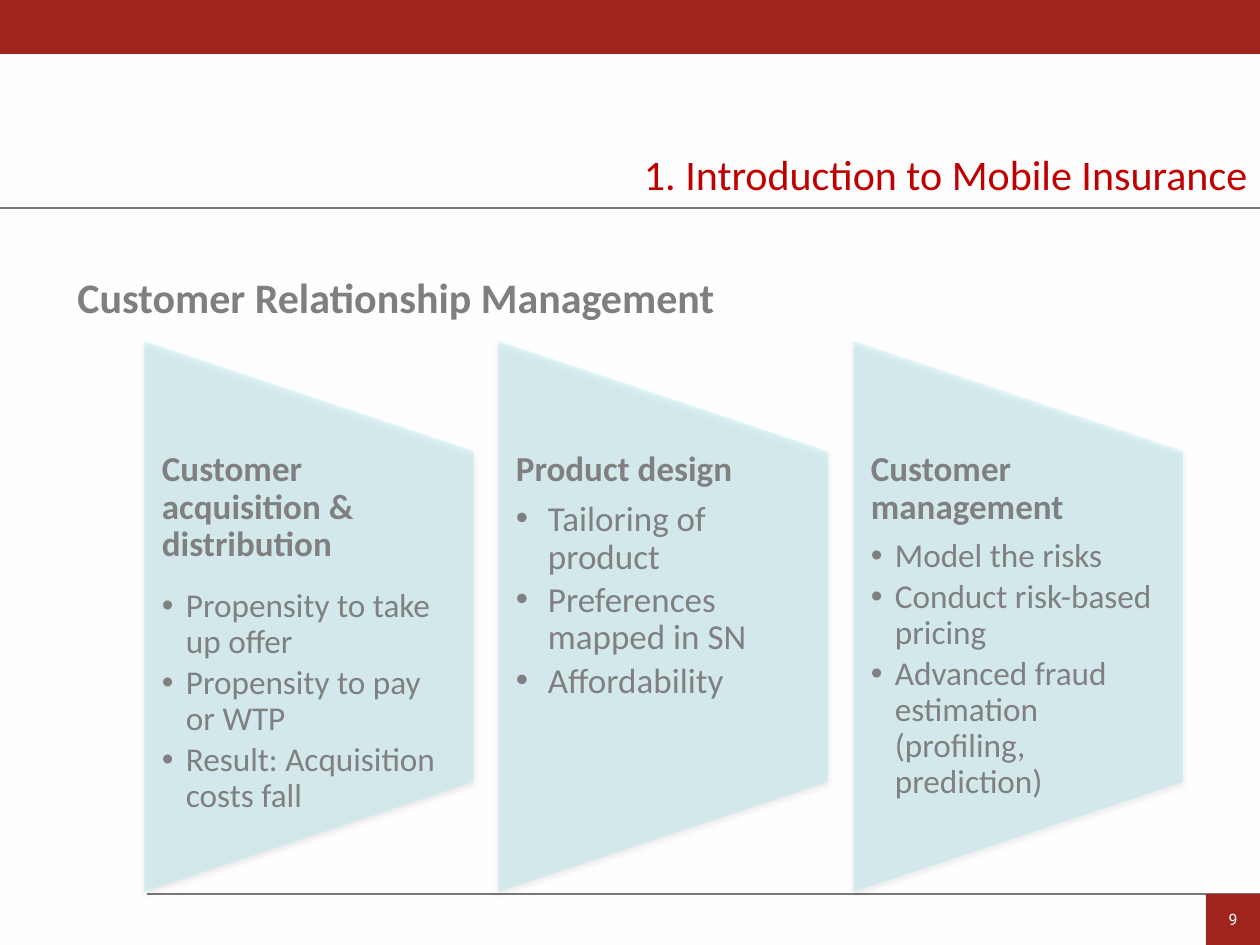
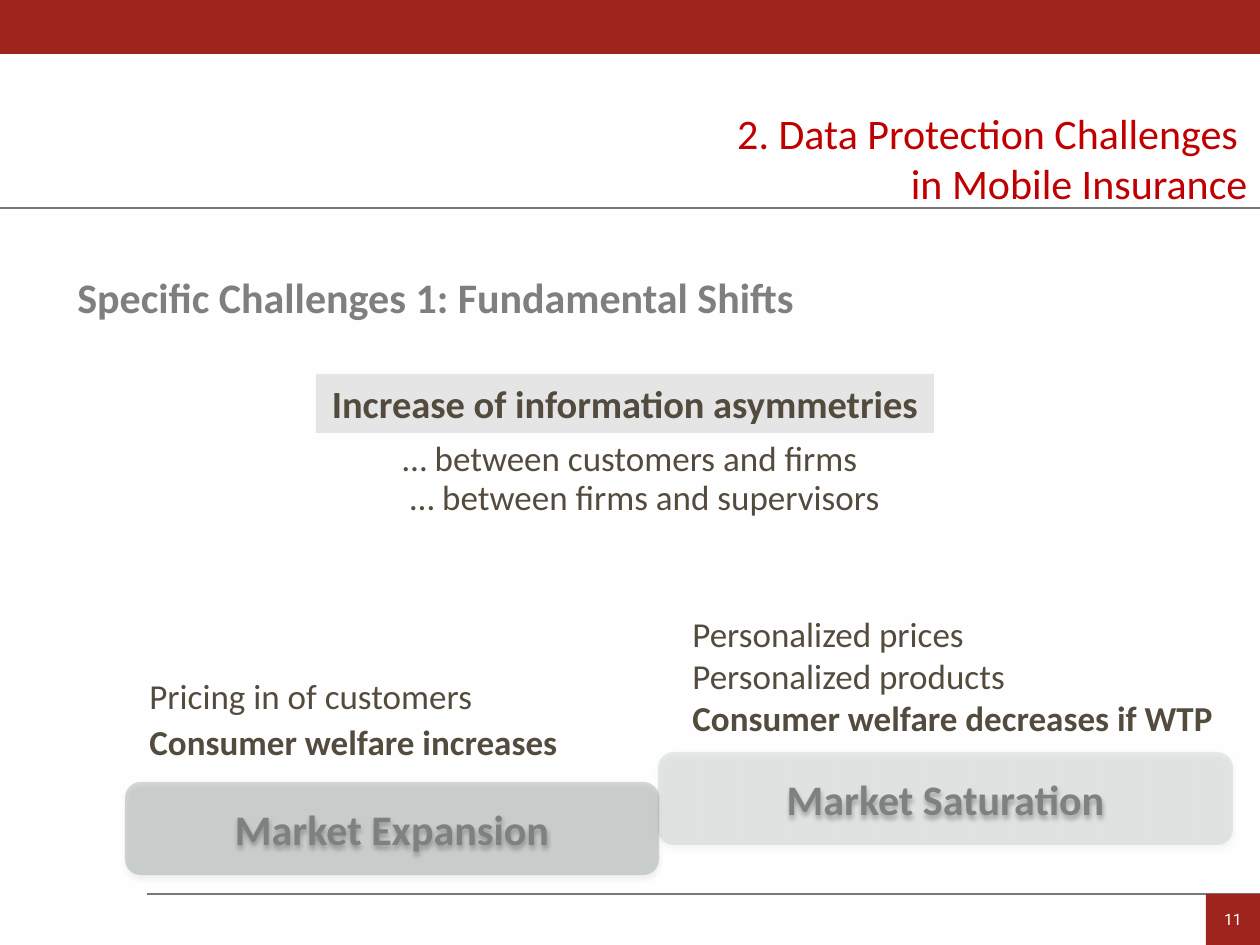
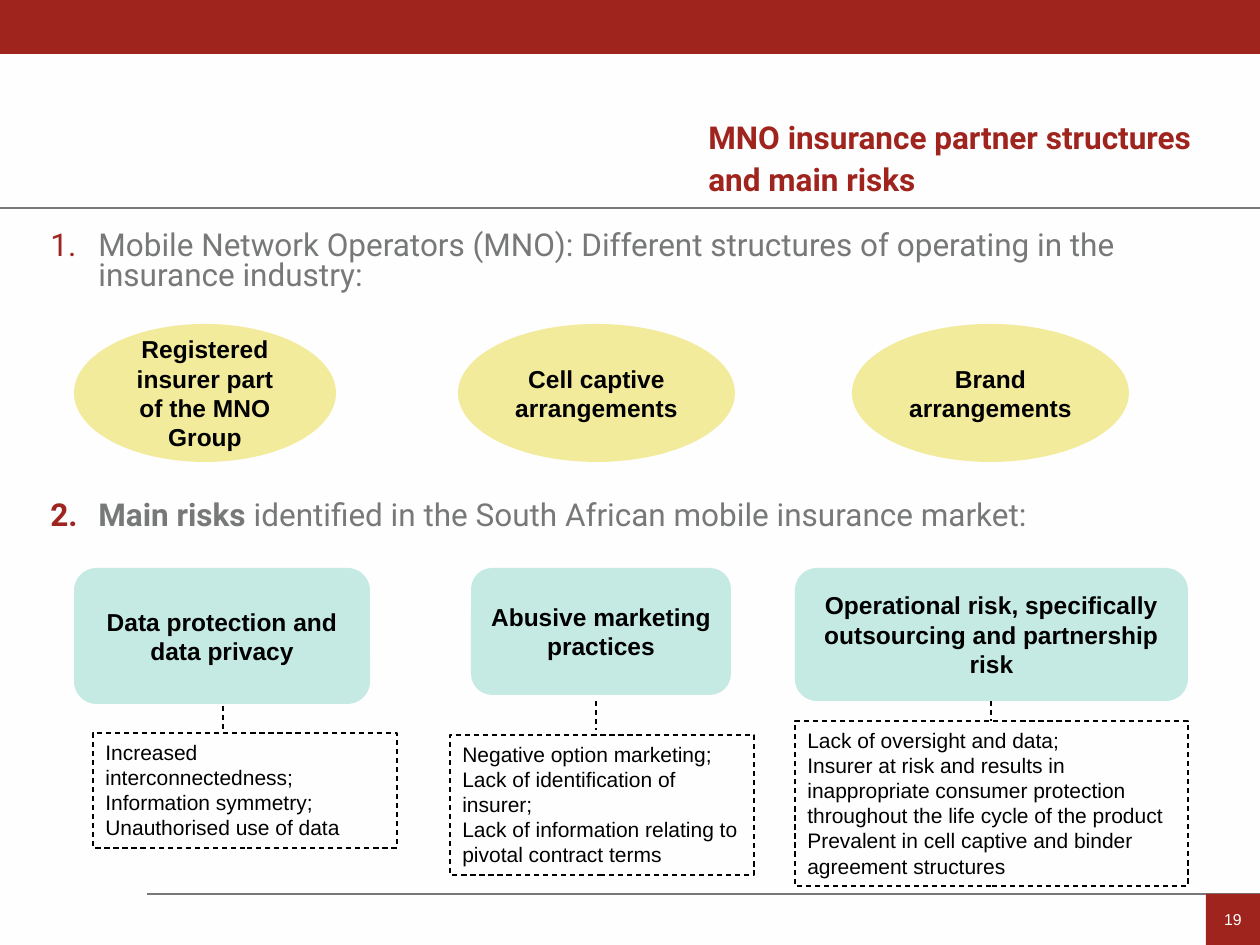
"""Builds three slides on mobile insurance."""
from dataclasses import dataclass
from lxml.etree import SubElement as Sub
from pptx import Presentation
from pptx.dml.color import RGBColor as Rgb
from pptx.enum.dml import MSO_LINE as Dash
from pptx.enum.shapes import MSO_CONNECTOR as Link, MSO_SHAPE as Kind
from pptx.enum.text import MSO_ANCHOR as Anchor, PP_ALIGN as Align
from pptx.oxml.ns import qn
from pptx.util import Pt


@dataclass(frozen=True)
class Type:
    """A text style."""
    size: float
    color: str
    bold: bool = False
    face: str = "Calibri"


class Theme:
    """Colours and type styles of the deck."""
    page, band, rule, ink = "FEFEFE", "A0241E", "777978", "000000"
    panel, label, oval, risk = "6DDAEA", "E5E5E5", "F2EB9C", "C5EAE3"
    count = "9F231E"
    title = Type(24, "C00000")
    name = Type(18, band, True, "Roboto")
    sub = Type(24, "7F7F7F", True)
    head = Type(20, "808080", True)
    bar = Type(24, "808080", True)
    key = Type(22, "534B3E", True)
    body = Type(20, "534B3E")
    strong = Type(20, "534B3E", True)
    item = Type(18, rule, False, "Roboto")
    node = Type(14, ink, True, "Arial")
    note = Type(12, ink, False, "Arial")


PX = 914400 / 126
WIDE, HIGH = 1260, 945

PANELS = [
    ("Customer acquisition & distribution", 14, 19, 24,
     ["Propensity to take up offer", "Propensity to pay or WTP",
      "Result: Acquisition costs fall"]),
    ("Product design", 7, 20, 32,
     ["Tailoring of product", "Preferences mapped in SN", "Affordability"]),
    ("Customer management", 7, 19, 24,
     ["Model the risks", "Conduct risk-based pricing",
      "Advanced fraud estimation (profiling, prediction)"]),
]
BARS = [
    ("Market Expansion", (125, 782, 534, 93), "0D2621", 17),
    ("Market Saturation", (658, 752, 575, 93), "1A4C42", 10),
]
CLAIMS = [
    (["Personalized prices", "Personalized products"], (680, 606, 400, 97), Theme.body),
    (["Consumer welfare decreases if WTP"], (680, 690, 561, 55), Theme.strong),
    (["Pricing in of customers"], (137, 668, 450, 55), Theme.body),
    (["Consumer welfare increases"], (137, 714, 450, 55), Theme.strong),
]
GAPS = [
    ("… between customers and firms", 315, 430),
    ("… between firms and supervisors", 330, 469),
]
ITEMS = [
    (226, "", "Mobile Network Operators (MNO): Different structures of operating "
     "in the insurance industry:"),
    (496, "Main risks ", "identified in the South African mobile insurance market:"),
]
OVALS = [
    ("Registered insurer part of the MNO Group", 74, 262),
    ("Cell captive arrangements", 458, 277),
    ("Brand arrangements", 852, 277),
]
RISKS = [
    ("Data protection and data privacy", (74, 568, 296, 136), (223, 706, 733),
     (93, 733, 304, 115),
     ["Increased interconnectedness; Information symmetry; Unauthorised use of data"]),
    ("Abusive marketing practices", (471, 568, 260, 127), (596, 701, 730),
     (450, 735, 304, 140),
     ["Negative option marketing; Lack of identification of insurer;",
      "Lack of information relating to pivotal contract terms"]),
    ("Operational risk, specifically outsourcing and partnership risk",
     (795, 568, 393, 133), (991, 701, 721), (795, 721, 393, 165),
     ["Lack of oversight and data;",
      "Insurer at risk and results in inappropriate consumer protection "
      "throughout the life cycle of the product",
      "Prevalent in cell captive and binder agreement structures"]),
]


def emu(*px):
    return [round(n * PX) for n in px]


def form(slide, kind, box, fill=None, alpha=None):
    shape = slide.shapes.add_shape(kind, *emu(*box))
    shape.shadow.inherit = False
    shape.line.fill.background()
    if fill:
        shape.fill.solid()
        shape.fill.fore_color.rgb = Rgb.from_string(fill)
    else:
        shape.fill.background()
    if alpha:
        glass(shape, alpha)
    return shape


def glass(shape, alpha):
    props = shape.element.spPr
    tint = props.find(qn("a:solidFill")).find(qn("a:srgbClr"))
    Sub(tint, qn("a:alpha"), val=str(alpha * 1000))
    cast = Sub(props.find(qn("a:effectLst")), qn("a:outerShdw"), blurRad="39370",
               dist="22860", dir="5400000", rotWithShape="0")
    dark = Sub(cast, qn("a:srgbClr"), val=Theme.ink)
    Sub(dark, qn("a:alpha"), val="35000")


def line(slide, x, y, right, low, color, width, dash=None):
    rule = slide.shapes.add_connector(Link.STRAIGHT, *emu(x, y, right, low))
    rule.line.color.rgb = Rgb.from_string(color)
    rule.line.width = Pt(width)
    if dash:
        rule.line.dash_style = dash
    Sub(rule.element.spPr, qn("a:effectLst"))


def bullet(para, hang, num=None):
    props = para._p.get_or_add_pPr()
    left = round(hang * PX)
    props.set("marL", str(left))
    props.set("indent", str(-left))
    if num:
        Sub(Sub(props, qn("a:buClr")), qn("a:srgbClr"), val=Theme.count)
        Sub(props, qn("a:buFont"), typeface="+mj-lt")
        Sub(props, qn("a:buAutoNum"), type="arabicPeriod", startAt=str(num))
    else:
        Sub(props, qn("a:buFont"), typeface="Arial")
        Sub(props, qn("a:buChar"), char="•")


def style(para, kind):
    font = para.font
    font.size, font.bold, font.name = Pt(kind.size), kind.bold, kind.face
    font.color.rgb = Rgb.from_string(kind.color)


def write(shape, texts, kind, align=Align.LEFT, anchor=Anchor.TOP, lead=None,
          after=0, hang=0, num=None):
    frame = shape.text_frame
    frame.word_wrap = True
    frame.vertical_anchor = anchor
    for text in texts:
        para = frame.paragraphs[0]
        if para.runs:
            para = frame.add_paragraph()
        para.add_run().text = text
        para.alignment = align
        para.space_after = Pt(after)
        if lead:
            para.line_spacing = lead
        if hang:
            bullet(para, hang, num)
        style(para, kind)


def text(slide, box, texts, kind, **opts):
    shape = slide.shapes.add_textbox(*emu(*box))
    write(shape, texts, kind, **opts)
    return shape


def center(shape, words, kind):
    write(shape, [words], kind, Align.CENTER, Anchor.MIDDLE)


def start(deck, num, face="Roboto"):
    slide = deck.slides.add_slide(deck.slide_layouts[6])
    slide.background.fill.solid()
    slide.background.fill.fore_color.rgb = Rgb.from_string(Theme.page)
    for x, y in [(147, 894), (0, 208)]:
        line(slide, x, y, WIDE, y, Theme.rule, 1.25)
    form(slide, Kind.RECTANGLE, (0, 0, WIDE, 54), Theme.band)
    tab = form(slide, Kind.RECTANGLE, (1206, 894, 54, 51), Theme.band)
    center(tab, str(num), Type(9, Theme.page, False, face))
    return slide


def top(slide, y, lines, sub):
    text(slide, (559, y, 701, 63), lines, Theme.title, align=Align.RIGHT)
    text(slide, (65, 265, 1172, 63), [sub], Theme.sub)


def manage(deck):
    slide = start(deck, 9)
    top(slide, 142, ["1. Introduction to Mobile Insurance"],
        "Customer Relationship Management")
    wide, tall, y = 330, 551, 341
    for i, (head, after, size, hang, points) in enumerate(PANELS):
        x = 144 + round(354.5 * i)
        box = (x + (wide - tall) / 2, y + (tall - wide) / 2, tall, wide)
        panel = form(slide, Kind.FLOWCHART_MANUAL_OPERATION, box, Theme.panel, 20)
        panel.rotation = 270
        area = text(slide, (x, 451, wide, 331), [head], Theme.head, lead=0.9, after=after)
        frame = area.text_frame
        frame.margin_left = frame.margin_right = emu(18)[0]
        frame.margin_top = frame.margin_bottom = 0
        write(area, points, Type(size, Theme.head.color), lead=0.9, after=3, hang=hang)


def shifts(deck):
    slide = start(deck, 11)
    top(slide, 101, ["2. Data Protection Challenges ", "in Mobile Insurance"],
        "Specific Challenges 1: Fundamental Shifts")
    for words, box, fill, alpha in BARS:
        center(form(slide, Kind.ROUNDED_RECTANGLE, box, fill, alpha), words, Theme.bar)
    label = form(slide, Kind.RECTANGLE, (316, 374, 618, 59), Theme.label)
    label.text_frame.margin_left = label.text_frame.margin_right = 0
    center(label, "Increase of information asymmetries", Theme.key)
    for words, x, y in GAPS:
        text(slide, (x, y, 630, 55), [words], Theme.body, align=Align.CENTER)
    for words, box, kind in CLAIMS:
        text(slide, box, words, kind)


def risks(deck):
    slide = start(deck, 19, "Arial")
    text(slide, (696, 118, 549, 76), ["MNO insurance partner structures and main risks"],
         Theme.name, anchor=Anchor.MIDDLE, lead=1.1)
    for num, (y, lead, rest) in enumerate(ITEMS, 1):
        area = text(slide, (38, y, 1092, 72), [lead or rest], Theme.item,
                    lead=0.8, hang=48, num=num)
        if lead:
            para = area.text_frame.paragraphs[0]
            para.runs[0].font.bold = True
            para.add_run().text = rest
    for words, x, wide in OVALS:
        center(form(slide, Kind.OVAL, (x, 324, wide, 138), Theme.oval), words, Theme.node)
    for words, box, (x, y, low), area, notes in RISKS:
        center(form(slide, Kind.ROUNDED_RECTANGLE, box, Theme.risk), words, Theme.node)
        note = form(slide, Kind.RECTANGLE, area)
        note.line.color.rgb = Rgb.from_string(Theme.ink)
        note.line.width = Pt(0.75)
        note.line.dash_style = Dash.DASH
        write(note, notes, Theme.note)
        line(slide, x, y, x, low, Theme.ink, 0.75, Dash.DASH)


def main():
    deck = Presentation()
    deck.slide_width, deck.slide_height = emu(WIDE, HIGH)
    for build in (manage, shifts, risks):
        build(deck)
    deck.save("out.pptx")


if __name__ == "__main__":
    main()
